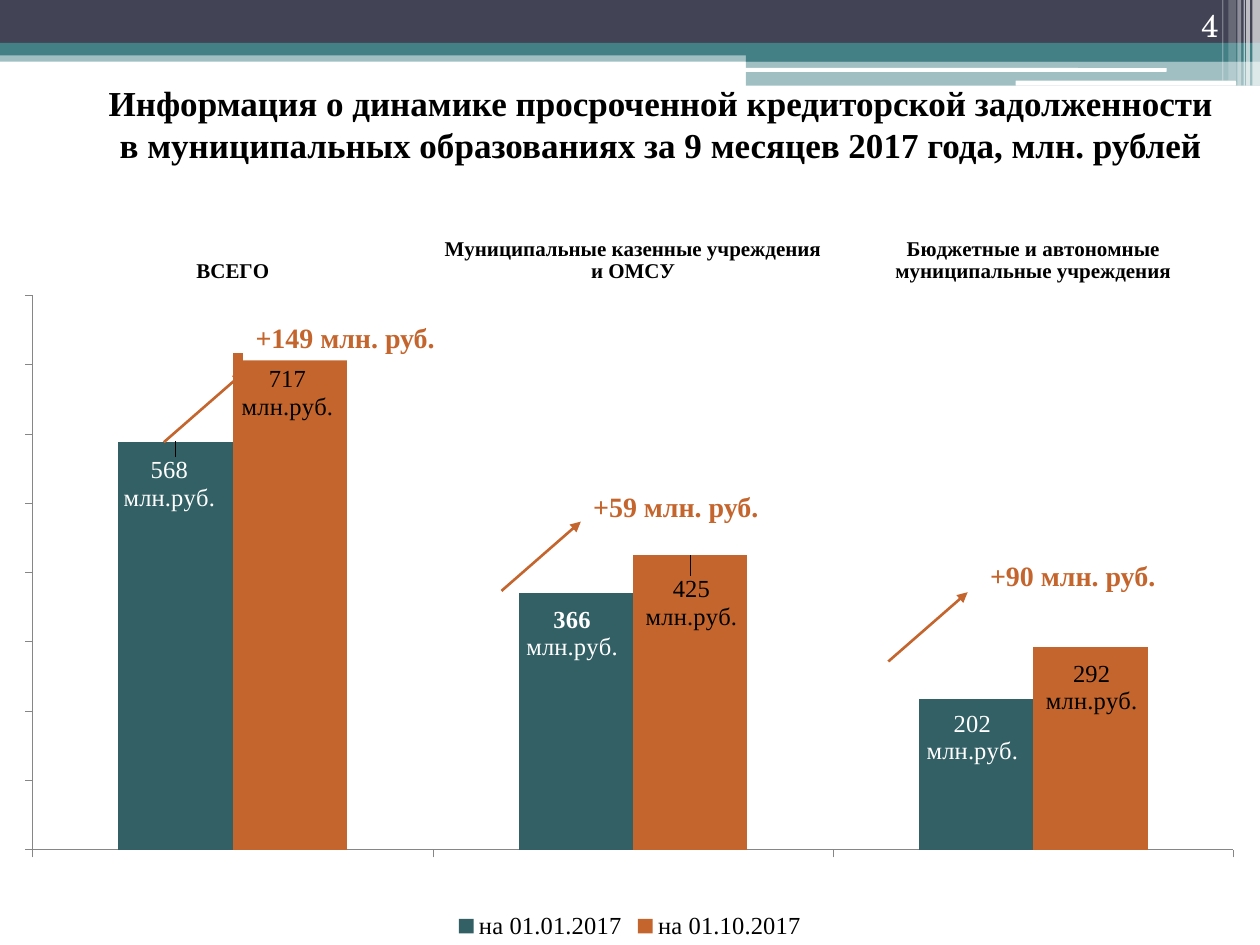
from lxml import etree
from pptx import Presentation
from pptx.chart.data import CategoryChartData
from pptx.dml.color import RGBColor
from pptx.enum.chart import XL_CHART_TYPE, XL_LABEL_POSITION as POS
from pptx.enum.chart import XL_LEGEND_POSITION, XL_TICK_LABEL_POSITION as TICK_LABEL, XL_TICK_MARK
from pptx.enum.shapes import MSO_CONNECTOR, MSO_SHAPE as SHAPE
from pptx.enum.text import MSO_ANCHOR, PP_ALIGN
from pptx.oxml import parse_xml
from pptx.oxml.ns import nsdecls, qn
from pptx.util import Inches, Pt

SERIF, TEAL, ORANGE, WHITE, BLACK = "Times New Roman", "438086", "C4652D", "FFFFFF", "000000"

# left, top, width, height, colour, opacity in percent
BANDS = [
    (0, 0.4, 10, 0.09, TEAL, 50),
    (0, 0, 10, 0.34, "424456", 100),
    (0, 0.34, 10, 0.1, TEAL, 100),
    (5.92, 0.39, 4.08, 0.1, TEAL, 100),
    (5.92, 0.48, 4.08, 0.2, TEAL, 50),
]
ROUNDED = [(5.91, 0.54, 3.35, 0.03, WHITE, 100), (8.06, 0.64, 1.75, 0.04, WHITE, 100)]
# left, width, height, opacity
STRIPES = [(9.94, 0.06, 0.68, 65), (9.89, 0.03, 0.68, 65), (9.87, 0.01, 0.68, 60),
           (9.82, 0.03, 0.68, 40), (9.75, 0.06, 0.64, 20), (9.7, 0.01, 0.64, 30)]

TITLE = ["Информация о динамике просроченной кредиторской задолженности",
         "в муниципальных образованиях за 9 месяцев 2017 года, млн. рублей"]
CATEGORIES = ["ВСЕГО", "Муниципальные казенные учреждения и ОМСУ",
              "Бюджетные и автономные муниципальные учреждения"]
# name, values in thousands, labels with their shift in inches, bar colour, label colour
SERIES = [
    ("на 01.01.2017", (589000, 370000, 218000),
     (("568", -0.05, 0.08), ("366", -0.03, 0.06), ("202", -0.03, 0.05)), "326065", WHITE),
    ("на 01.10.2017", (717000, 425000, 292000),
     (("717", -0.02, 0.06), ("425", 0.01, 0.12), ("292", 0.01, 0.06)), ORANGE, BLACK),
]
BOLD_LABEL = "366"
CHART_W, CHART_H = 10, 6.03
PLOT = {"x": 0.026, "y": 0.145, "w": 0.953, "h": 0.73}

# text, box left, top, width; arrow start
GROWTH = [
    ("+149 млн. руб.", 1.93, 2.49, 1.64, (1.3, 3.51)),
    ("+90 млн. руб.", 7.76, 4.38, 1.53, (7.05, 5.25)),
    ("+59 млн. руб.", 4.61, 3.83, 1.53, (3.98, 4.69)),
]
ARROW_DX, ARROW_DY = 0.63, -0.55


def rgb(value):
    return RGBColor.from_string(value)


def style(font, color, **values):
    font.color.rgb = rgb(color)
    for name, value in values.items():
        setattr(font, name, value)


def add_block(slide, kind, x, y, w, h, color, opacity=100):
    s = slide.shapes.add_shape(kind, *map(Inches, (x, y, w, h)))
    s.shadow.inherit = False
    s.fill.solid()
    s.fill.fore_color.rgb = rgb(color)
    s.line.fill.background()
    if opacity < 100:
        clr = s.fill._xPr.find(".//" + qn("a:srgbClr"))
        etree.SubElement(clr, qn("a:alpha")).set("val", str(opacity * 1000))
    return s


def write(s, lines, align, color, indent=0, **font):
    tf = s.text_frame
    for i, line in enumerate(lines):
        p = tf.paragraphs[0] if i == 0 else tf.add_paragraph()
        p.alignment = align
        if indent:
            p._p.get_or_add_pPr().set("indent", str(Inches(indent)))
        r = p.add_run()
        r.text = line
        style(r.font, color, **font)
    return tf


def add_arrow(slide, start):
    x, y = start
    c = slide.shapes.add_connector(MSO_CONNECTOR.STRAIGHT,
                                   *map(Inches, (x, y, x + ARROW_DX, y + ARROW_DY)))
    c.line.color.rgb = rgb(ORANGE)
    c.line.width = Pt(1.5)
    etree.SubElement(c.line._get_or_add_ln(), qn("a:tailEnd")).set("type", "triangle")
    etree.SubElement(c._element.spPr, qn("a:effectLst"))


def set_layout(parent, index, values, modes=""):
    """Place a chart part by fractions of the chart size."""
    for old in parent.findall(qn("c:layout")):
        parent.remove(old)
    parts = "".join(f'<c:{k} val="{v}"/>' for k, v in values.items())
    parent.insert(index, parse_xml(f'<c:layout {nsdecls("c")}><c:manualLayout>'
                                   f'{modes}{parts}</c:manualLayout></c:layout>'))


def label_bar(point, number, dx, dy, color):
    label = point.data_label
    tf = label.text_frame
    for p, text in ((tf.paragraphs[0], number), (tf.add_paragraph(), "млн.руб.")):
        r = p.add_run()
        r.text = text
        style(r.font, color, name=SERIF, size=Pt(14), bold=text == BOLD_LABEL)
    label.position = POS.INSIDE_END
    set_layout(label._get_or_add_dLbl(), 1, {"x": dx / CHART_W, "y": dy / CHART_H})


def add_debt_chart(slide):
    data = CategoryChartData(number_format="#,##0")
    data.categories = CATEGORIES
    for name, values, *_ in SERIES:
        data.add_series(name, values)
    chart = slide.shapes.add_chart(XL_CHART_TYPE.COLUMN_CLUSTERED,
                                   *map(Inches, (0, 1.47, CHART_W, CHART_H)), data).chart
    style(chart.font, BLACK, name=SERIF, size=Pt(14))
    chart.has_title = False
    chart.has_legend = True
    chart.legend.position = XL_LEGEND_POSITION.BOTTOM
    chart.legend.include_in_layout = False
    set_layout(chart._chartSpace.chart.plotArea, 0, PLOT,
               '<c:layoutTarget val="inner"/><c:xMode val="edge"/><c:yMode val="edge"/>')

    cat, val = chart.category_axis, chart.value_axis
    for axis, labels in ((cat, TICK_LABEL.HIGH), (val, TICK_LABEL.NONE)):
        axis.has_major_gridlines = False
        axis.major_tick_mark = XL_TICK_MARK.OUTSIDE
        axis.tick_label_position = labels
        axis.format.line.color.rgb = rgb("868686")
        axis.format.line.width = Pt(0.5)
    style(cat.tick_labels.font, BLACK, name=SERIF, size=Pt(12), bold=True)
    val.minimum_scale, val.maximum_scale, val.major_unit = 0, 800000, 100000

    plot = chart.plots[0]
    plot.gap_width, plot.overlap, plot.vary_by_categories = 150, 0, False
    for ser, (_, _, labels, color, label_color) in zip(plot.series, SERIES):
        ser.format.fill.solid()
        ser.format.fill.fore_color.rgb = rgb(color)
        ser.data_labels.show_value = True
        style(ser.data_labels.font, label_color, name=SERIF, size=Pt(14), bold=True)
        for i, label in enumerate(labels):
            label_bar(ser.points[i], *label, label_color)


def main():
    prs = Presentation()
    prs.slide_width, prs.slide_height = Inches(10), Inches(7.5)
    slide = prs.slides.add_slide(prs.slide_layouts[6])

    for band in BANDS:
        add_block(slide, SHAPE.RECTANGLE, *band)
    for bar in ROUNDED:
        add_block(slide, SHAPE.ROUNDED_RECTANGLE, *bar)
    for x, w, h, opacity in STRIPES:
        add_block(slide, SHAPE.RECTANGLE, x, 0, w, h, WHITE, opacity)

    title = slide.shapes.add_textbox(*map(Inches, (0, 0.6, 10, 0.77)))
    write(title, TITLE, PP_ALIGN.CENTER, BLACK, indent=0.49,
          name=SERIF, size=Pt(20), bold=True).word_wrap = True

    add_debt_chart(slide)

    number = slide.shapes.add_textbox(*map(Inches, (8.94, 0, 0.83, 0.4)))
    tf = write(number, ["4"], PP_ALIGN.RIGHT, WHITE, name="TeX Gyre Schola", size=Pt(18))
    tf.word_wrap, tf.vertical_anchor = True, MSO_ANCHOR.BOTTOM

    for text, x, y, w, start in GROWTH:
        box = add_block(slide, SHAPE.RECTANGLE, x, y, w, 0.37, WHITE)
        write(box, [text], PP_ALIGN.LEFT, ORANGE,
              name=SERIF, size=Pt(16), bold=True).word_wrap = False
        add_arrow(slide, start)

    prs.save("out.pptx")


if __name__ == "__main__":
    main()
